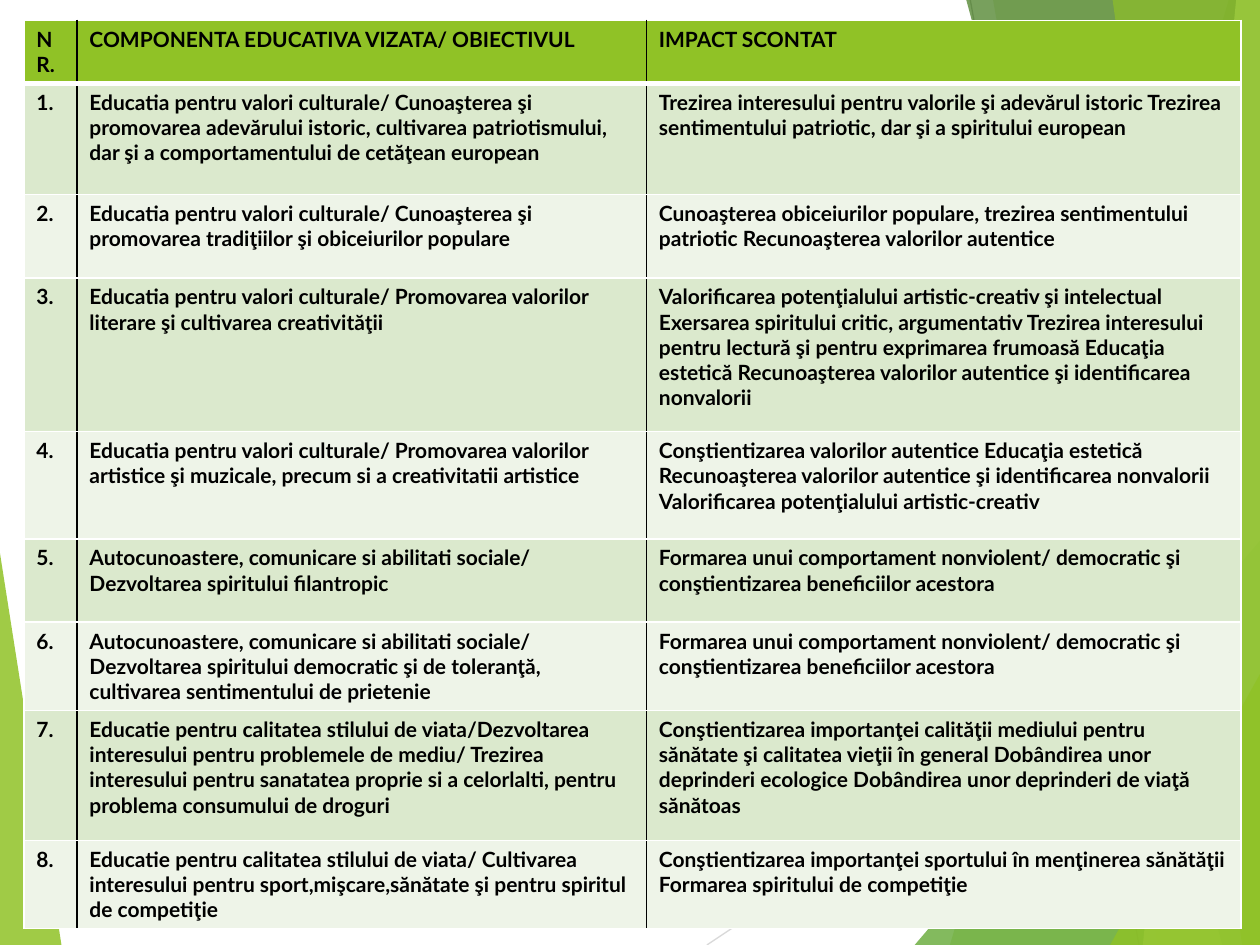
from dataclasses import dataclass

from lxml.etree import SubElement
from pptx import Presentation
from pptx.dml.color import RGBColor
from pptx.oxml.ns import qn
from pptx.util import Cm, Pt


@dataclass(frozen=True)
class Theme:
    font: str = "Lato"
    text_size: float = 12
    text: str = "000000"
    white: str = "FFFFFF"
    lime: str = "90C226"
    green: str = "54A021"
    forest: str = "3F7819"
    pale_lime: str = "C0E474"
    odd_row: str = "DBE9CD"
    even_row: str = "EEF4E8"
    steep_line: str = "BFBFBF"
    flat_line: str = "D9D9D9"
    hairline: float = 0.75
    border: float = 1
    header_border: float = 3


THEME = Theme()
SLIDE_W, SLIDE_H = 25.4, 19.05
COL_WIDTHS = (1.07, 11.48, 11.99)
ROW_HEIGHTS = (1.24, 2.24, 1.68, 3.1, 2.16, 1.68, 1.75, 2.62, 1.75)

HEADER = ("NR.", "COMPONENTA EDUCATIVA VIZATA/ OBIECTIVUL", "IMPACT SCONTAT")
OBJECTIVES = (
    ("Educatia pentru valori culturale/ Cunoaşterea şi promovarea adevărului istoric, "
     "cultivarea patriotismului, dar şi a comportamentului de cetăţean european",
     "Trezirea interesului pentru valorile şi adevărul istoric Trezirea sentimentului "
     "patriotic, dar şi a spiritului european"),
    ("Educatia pentru valori culturale/ Cunoaşterea şi promovarea tradiţiilor şi "
     "obiceiurilor populare",
     "Cunoaşterea obiceiurilor populare, trezirea sentimentului patriotic "
     "Recunoaşterea valorilor autentice"),
    ("Educatia pentru valori culturale/ Promovarea valorilor literare şi cultivarea "
     "creativităţii",
     "Valorificarea potenţialului artistic-creativ şi intelectual Exersarea spiritului "
     "critic, argumentativ Trezirea interesului pentru lectură şi pentru exprimarea "
     "frumoasă Educaţia estetică Recunoaşterea valorilor autentice şi identificarea "
     "nonvalorii"),
    ("Educatia pentru valori culturale/ Promovarea valorilor artistice şi muzicale, "
     "precum si a creativitatii artistice",
     "Conştientizarea valorilor autentice Educaţia estetică Recunoaşterea valorilor "
     "autentice şi identificarea nonvalorii Valorificarea potenţialului artistic-creativ"),
    ("Autocunoastere, comunicare si abilitati sociale/ Dezvoltarea spiritului filantropic",
     "Formarea unui comportament nonviolent/ democratic şi conştientizarea beneficiilor "
     "acestora"),
    ("Autocunoastere, comunicare si abilitati sociale/ Dezvoltarea spiritului democratic "
     "şi de toleranţă, cultivarea sentimentului de prietenie",
     "Formarea unui comportament nonviolent/ democratic şi conştientizarea beneficiilor "
     "acestora"),
    ("Educatie pentru calitatea stilului de viata/Dezvoltarea interesului pentru "
     "problemele de mediu/ Trezirea interesului pentru sanatatea proprie si a "
     "celorlalti, pentru problema consumului de droguri",
     "Conştientizarea importanţei calităţii mediului pentru sănătate şi calitatea vieţii "
     "în general Dobândirea unor deprinderi ecologice Dobândirea unor deprinderi de viaţă "
     "sănătoas"),
    ("Educatie pentru calitatea stilului de viata/ Cultivarea interesului pentru "
     "sport,mişcare,sănătate şi pentru spiritul de competiţie",
     "Conştientizarea importanţei sportului în menţinerea sănătăţii Formarea spiritului "
     "de competiţie"),
)


def add_facet(slide, points, color, opacity):
    """Draw a borderless translucent polygon; opacity is in percent."""
    start, *rest = [(Cm(x), Cm(y)) for x, y in points]
    builder = slide.shapes.build_freeform(*start)
    builder.add_line_segments(rest, close=True)
    sp = builder.convert_to_shape()
    sp.shadow.inherit = False
    sp.line.fill.background()
    sp.fill.solid()
    sp.fill.fore_color.rgb = RGBColor.from_string(color)
    srgb = sp.fill._xPr.find(qn("a:solidFill")).find(qn("a:srgbClr"))
    SubElement(srgb, qn("a:alpha")).set("val", str(opacity * 1000))


def add_hairline(slide, start, end, color):
    line = slide.shapes.add_connector(1, *(Cm(v) for v in (*start, *end)))
    line.line.color.rgb = RGBColor.from_string(color)
    line.line.width = Pt(THEME.hairline)
    SubElement(line._element.spPr, qn("a:effectLst"))


def add_background(slide, left, top, width, height):
    right, bottom = left + width, top + height

    def band(top_x, bottom_x):
        return ((left + top_x, top), (left + bottom_x, bottom),
                (right, bottom), (right, top))

    def wedge(bottom_x, right_y):
        return (left + bottom_x, bottom), (right, top + right_y), (right, bottom)

    left_wedge = (left, top + 11.15), (left + 1.24, bottom), (left, bottom)
    add_facet(slide, left_wedge, THEME.lime, 85)
    add_hairline(slide, (left + 14.25, bottom), (right, top + 11.61), THEME.flat_line)
    add_hairline(slide, (left + 19.56, top), (left + 22.96, bottom), THEME.steep_line)
    for points, color, opacity in (
        (band(24.77, 19.15), THEME.lime, 30),
        (band(20.02, 23.34), THEME.lime, 20),
        (wedge(18.44, 10.9), THEME.green, 72),
        (band(19.48, 24.64), THEME.forest, 70),
        (band(24.92, 23.04), THEME.pale_lime, 70),
        (band(22.43, 25.04), THEME.lime, 65),
        (wedge(22.38, 13.59), THEME.lime, 80),
    ):
        add_facet(slide, points, color, opacity)


def set_border(cell, side, color, width):
    ln = SubElement(cell._tc.get_or_add_tcPr(), qn(f"a:ln{side}"), w=str(Pt(width)))
    fill = SubElement(ln, qn("a:solidFill"))
    SubElement(fill, qn("a:srgbClr"), val=color)


def format_cell(cell, row, col):
    """Apply borders before the fill, as the schema orders them."""
    last_col = len(COL_WIDTHS) - 1
    set_border(cell, "L", THEME.text if col > 0 else THEME.white, THEME.border)
    set_border(cell, "R", THEME.text if col < last_col else THEME.white, THEME.border)
    set_border(cell, "T", THEME.white, THEME.header_border if row == 1 else THEME.border)
    set_border(cell, "B", THEME.white, THEME.header_border if row == 0 else THEME.border)
    stripe = THEME.odd_row if row % 2 else THEME.even_row
    cell.fill.solid()
    cell.fill.fore_color.rgb = RGBColor.from_string(stripe if row else THEME.lime)
    for r in cell.text_frame.paragraphs[0].runs:
        r.font.name = THEME.font
        r.font.size = Pt(THEME.text_size)
        r.font.bold = True
        r.font.color.rgb = RGBColor.from_string(THEME.text)


def add_objectives_table(slide, left, top):
    rows = [HEADER] + [(f"{n}.", *texts) for n, texts in enumerate(OBJECTIVES, 1)]
    table = slide.shapes.add_table(
        len(rows), len(HEADER), Cm(left), Cm(top),
        Cm(sum(COL_WIDTHS)), Cm(sum(ROW_HEIGHTS))).table
    for column, width in zip(table.columns, COL_WIDTHS):
        column.width = Cm(width)
    for i, (texts, height) in enumerate(zip(rows, ROW_HEIGHTS)):
        table.rows[i].height = Cm(height)
        for j, text in enumerate(texts):
            cell = table.cell(i, j)
            cell.text_frame.text = text
            format_cell(cell, i, j)


def main():
    prs = Presentation()
    prs.slide_width, prs.slide_height = Cm(SLIDE_W), Cm(SLIDE_H)
    slide = prs.slides.add_slide(prs.slide_layouts[6])
    add_background(slide, 0, 0, SLIDE_W, SLIDE_H)
    add_objectives_table(slide, 0.48, 0.41)
    prs.save("out.pptx")


if __name__ == "__main__":
    main()
